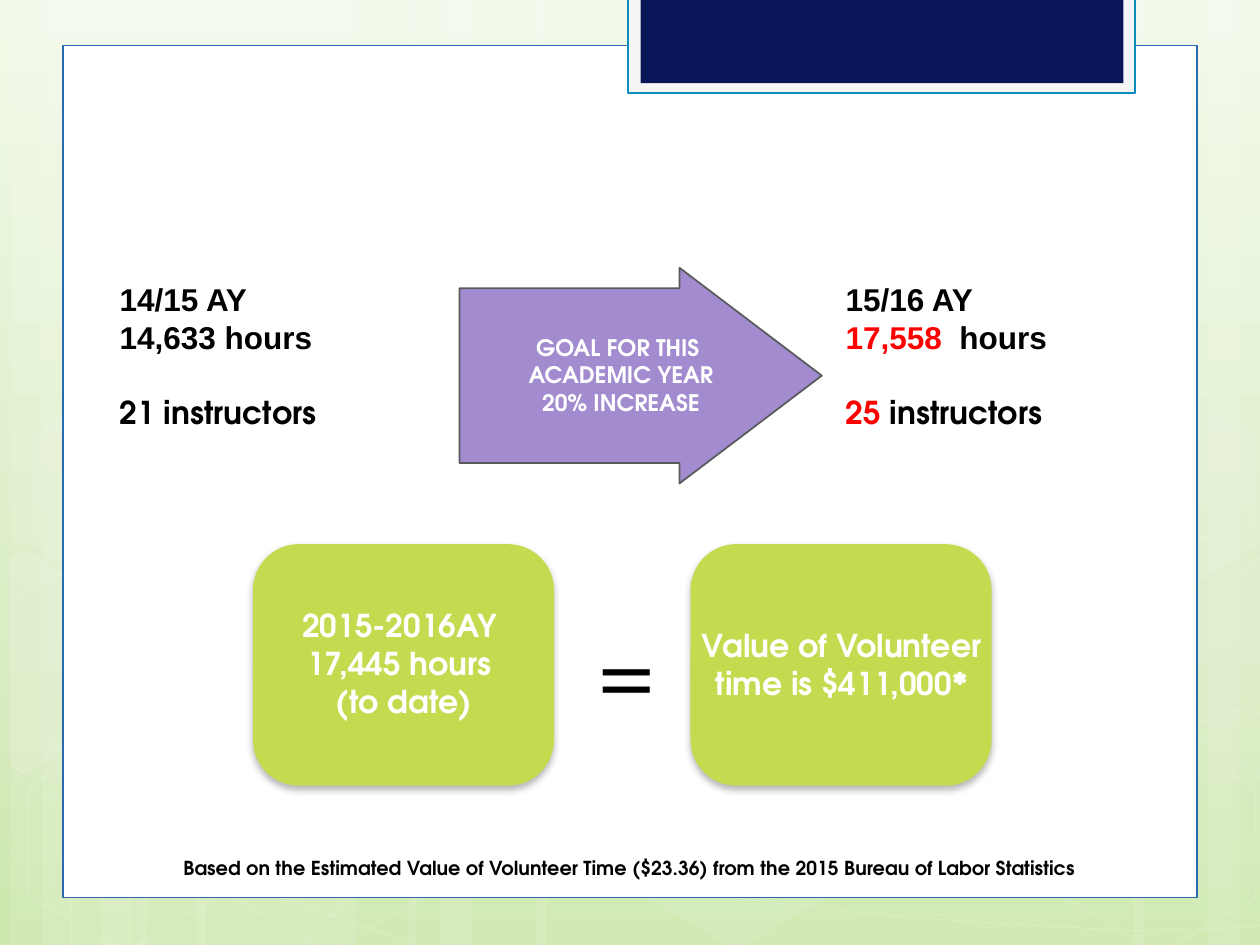
from copy import deepcopy

from lxml import etree
from pptx import Presentation
from pptx.dml.color import RGBColor
from pptx.enum import shapes, text
from pptx.oxml import ns
from pptx.util import Pt

WHITE = RGBColor(0xFF, 0xFF, 0xFF)
BLACK = RGBColor(0x00, 0x00, 0x00)
RED = RGBColor(0xFF, 0x00, 0x00)
GREEN = RGBColor(0xC5, 0xDB, 0x4F)
PURPLE = RGBColor(0xA2, 0x8C, 0xCF)
GRAY = RGBColor(0x58, 0x5A, 0x5C)
PALE_GRAY = RGBColor(0xF5, 0xF5, 0xF5)
NAVY = RGBColor(0x08, 0x16, 0x57)
TAB_BLUE = RGBColor(0x09, 0x8D, 0xBD)
PANEL_BLUE = RGBColor(0x2A, 0x6A, 0xB0)
BACKDROP = [(0, RGBColor(0xCD, 0xE7, 0xAC)), (0.35, RGBColor(0xDB, 0xED, 0xC5)),
            (1, RGBColor(0xF1, 0xF9, 0xE8))]
SANS, ROUND = "Arial", "TeX Gyre Adventor"
SHAPE = shapes.MSO_SHAPE
CENTER = text.PP_ALIGN.CENTER


def paint(shape, fill=None, line=None, width=1, fill_alpha=None, line_alpha=None):
    """Set fill and line, with opacity in percent."""
    shape.shadow.inherit = False
    if fill is None:
        shape.fill.background()
    else:
        shape.fill.solid()
        shape.fill.fore_color.rgb = fill
    if line is None:
        shape.line.fill.background()
    else:
        shape.line.color.rgb = line
        shape.line.width = Pt(width)
    for parent, alpha in (("", fill_alpha), ("a:ln/", line_alpha)):
        if alpha is not None:
            color = shape._element.xpath(f"./p:spPr/{parent}a:solidFill/a:srgbClr")[0]
            etree.SubElement(color, ns.qn("a:alpha"), val=str(alpha * 1000))


def add_text(box, paragraphs, size, color, bold=True, align=None, wrap=True):
    """Each paragraph is a list of (wording, font, colour or None) runs."""
    frame = slide.shapes.add_textbox(*map(Pt, box)).text_frame
    sides = ("left", "top", "right", "bottom")
    settings = {f"margin_{side}": Pt(3.6) for side in sides} | {"word_wrap": wrap}
    for name, value in settings.items():
        setattr(frame, name, value)
    for index, runs in enumerate(paragraphs):
        paragraph = frame.add_paragraph() if index else frame.paragraphs[0]
        paragraph.alignment = align
        for wording, font, run_color in runs:
            run = paragraph.add_run()
            run.text = wording
            for name, value in {"name": font, "size": Pt(size), "bold": bold}.items():
                setattr(run.font, name, value)
            run.font.color.rgb = run_color or color
    return frame


presentation = Presentation()
presentation.slide_width, presentation.slide_height = Pt(720), Pt(540)
slide = presentation.slides.add_slide(presentation.slide_layouts[6])

# Background gradient, dark at the bottom
backdrop = slide.background.fill
backdrop.gradient()
backdrop.gradient_angle = 90
stop_list = slide._element.xpath(".//p:bgPr/a:gradFill/a:gsLst")[0]
stop_list.append(deepcopy(stop_list[-1]))
for stop, (position, color) in zip(backdrop.gradient_stops, BACKDROP):
    stop.position = position
    stop.color.rgb = color

# Translucent vertical stripes: left, width
stripes = [(78, 126), (6, 36), (24, 60), (112, 126), (40, 36), (58, 60),
           (528, 126), (690, 36), (648, 60), (306, 222), (234, 36), (252, 60)]
for left, width in stripes:
    stripe = slide.shapes.add_shape(SHAPE.RECTANGLE, Pt(left), 0, Pt(width), Pt(540))
    paint(stripe, WHITE, fill_alpha=10)

# Thin curves: a start point, then cubic segments
curves = [
    [(5, 485), (44, 487, 83, 489, 137, 488), (191, 487, 258, 486, 330, 479),
     (402, 472, 504, 458, 570, 444), (636, 431, 703, 409, 725, 397)],
    [(5, 343), (26, 332, 47, 321, 87, 310), (128, 300, 186, 284, 250, 279),
     (314, 274, 392, 273, 471, 279), (550, 284, 682, 307, 725, 312)],
    [(4, 444), (91, 484, 178, 523, 240, 539)],
    [(5, 416), (27, 424, 50, 432, 92, 444), (134, 454, 197, 472, 257, 485),
     (317, 497, 392, 510, 452, 517), (512, 525, 576, 528, 614, 530),
     (652, 533, 662, 531, 680, 531), (699, 531, 712, 530, 725, 528)],
    [(174, 539), (187, 525, 200, 510, 217, 498), (235, 485, 259, 470, 279, 460),
     (300, 450, 312, 446, 338, 438), (364, 431, 413, 421, 438, 416),
     (464, 411, 467, 411, 490, 410), (512, 408, 547, 405, 572, 405),
     (597, 404, 638, 405, 638, 405), (654, 405, 670, 405, 686, 405),
     (699, 405, 711, 406, 724, 408)],
]
STEPS = 10
outlines = []  # points, closed, rotation, line width, fill opacity, line opacity
for start, *segments in curves:
    points = [start]
    for x1, y1, x2, y2, x3, y3 in segments:
        x0, y0 = points[-1]
        for step in range(1, STEPS + 1):
            t = step / STEPS
            s = 1 - t
            a, b, c, d = s**3, 3 * s * s * t, 3 * s * t * t, t**3
            points.append((a * x0 + b * x1 + c * x2 + d * x3,
                           a * y0 + b * y1 + c * y2 + d * y3))
    outlines.append((points, False, 0, 0.5, None, 20))

# Hexagons: left, top, fill opacity, line opacity
hexagons = [(240, 26, 4, 8), (358, 424, 6, 12), (8, 426, None, 12), (10, 225, 7, 8),
            (125, 426, None, 12), (542, 326, 10, 12), (600, 427, None, 12), (600, 226, 7, 8)]
corners = [(0, 0.5), (0.25, 0), (0.75, 0), (1, 0.5), (0.75, 1), (0.25, 1)]
for left, top, fill_alpha, line_alpha in hexagons:
    points = [(left + 126 * x, top + 109.4 * y) for x, y in corners]
    outlines.append((points, True, 30, 1, fill_alpha, line_alpha))

# Hexagons cut off by the slide edges
cut_hexagons = [
    ([(6, 320), (14, 315), (69, 347), (68, 410), (14, 442), (6, 437)], 10),
    ([(667, 349), (721, 318), (726, 321), (726, 441), (721, 444), (667, 413)], 4),
    ([(667, 149), (721, 117), (727, 121), (727, 241), (721, 244), (667, 212)], None),
]
outlines += [(points, True, 0, 1, alpha, 12) for points, alpha in cut_hexagons]

for points, closed, rotation, width, fill_alpha, line_alpha in outlines:
    start, *rest = [(Pt(x), Pt(y)) for x, y in points]
    builder = slide.shapes.build_freeform(*start, scale=1)
    builder.add_line_segments(rest, close=closed)
    outline = builder.convert_to_shape()
    outline.rotation = rotation
    paint(outline, WHITE if fill_alpha else None, WHITE, width, fill_alpha, line_alpha)

# White panel and navy tab
for box, fill, line, width in [
    ((36, 26, 648, 487), WHITE, PANEL_BLUE, 0.75),
    ((359, -1.5, 289.5, 54.7), PALE_GRAY, TAB_BLUE, 1.25),
    ((366, -1.5, 276, 49), NAVY, None, 0),
]:
    paint(slide.shapes.add_shape(SHAPE.RECTANGLE, *map(Pt, box)), fill, line, width)

# Green cards with a soft shadow
for left in (394.6, 144.6):
    card = slide.shapes.add_shape(SHAPE.ROUNDED_RECTANGLE, Pt(left), Pt(311), Pt(172), Pt(138))
    card.adjustments[0] = 0.19
    paint(card, GREEN)
    effects = card._element.spPr.find(ns.qn("a:effectLst"))
    shadow = etree.SubElement(effects, ns.qn("a:outerShdw"), blurRad=str(Pt(4)),
                              dist=str(Pt(2)), dir="5400000", rotWithShape="0")
    shadow_color = etree.SubElement(shadow, ns.qn("a:srgbClr"), val=str(BLACK))
    etree.SubElement(shadow_color, ns.qn("a:alpha"), val="28000")

# Goal arrow
arrow = slide.shapes.add_shape(SHAPE.RIGHT_ARROW, Pt(262.6), Pt(153), Pt(207), Pt(123.3))
arrow.adjustments[0], arrow.adjustments[1] = 0.81, 0.66
paint(arrow, PURPLE, GRAY)

# Last year and this year
last_year = [[("14/15 AY", SANS, None)], [("14,633 hours", SANS, None)],
             [("21 instructors", ROUND, None)]]
this_year = [[("15/16 AY", SANS, None)],
             [("17,558 ", SANS, RED), (" hours", SANS, None)],
             [("25", ROUND, RED), (" instructors", ROUND, None)]]
for box, paragraphs in [((64.8, 156.4, 187, 94.3), last_year),
                        ((479.6, 156.4, 279, 94.3), this_year)]:
    frame = add_text(box, paragraphs, 18, BLACK)
    frame.paragraphs[-1].space_before = Pt(21.6)

# Centred labels: box, lines, size, colour
for box, lines, size, color in [
    ((231.8, 187.2, 246, 55.4), ["GOAL FOR THIS ", "ACADEMIC YEAR", "20% INCREASE"], 13, WHITE),
    ((122.4, 342.7, 216.7, 73.4), ["2015-2016AY ", "17,445 hours ", "(to date)"], 18, WHITE),
    ((394.6, 354.2, 172.8, 51), ["Value of Volunteer time is $411,000*"], 18, WHITE),
    ((37.4, 486, 645, 20), ["Based on the Estimated Value of Volunteer Time ($23.36) "
                            "from the 2015 Bureau of Labor Statistics"], 11, BLACK),
]:
    add_text(box, [[(line, ROUND, None)] for line in lines], size, color, align=CENTER)

# Equals sign between the cards
add_text((337, 350, 37.4, 66.2), [[("=", ROUND, None)]], 48, BLACK, bold=False, wrap=False)

presentation.save("out.pptx")
